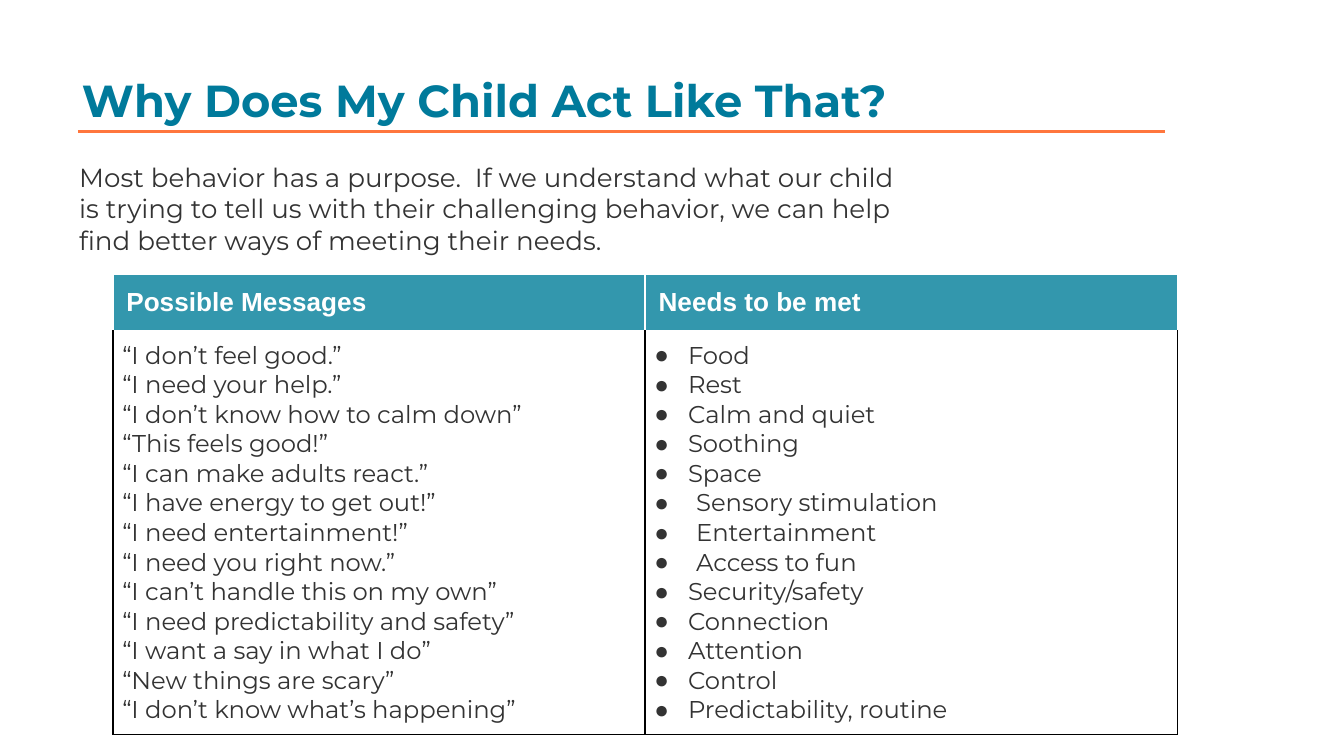
from dataclasses import dataclass

from lxml.etree import SubElement
from pptx import Presentation
from pptx.dml.color import RGBColor
from pptx.enum.shapes import MSO_CONNECTOR
from pptx.enum.text import MSO_ANCHOR, MSO_AUTO_SIZE, PP_ALIGN
from pptx.oxml.ns import qn
from pptx.util import Inches, Pt


@dataclass(frozen=True)
class Theme:
    heading: str = "007A9B"
    accent: str = "FF763D"
    text: str = "333333"
    header: str = "3397AD"
    white: str = "FFFFFF"
    black: str = "000000"
    font: str = "Montserrat"
    header_font: str = "Arial"
    title_size: float = 24
    intro_size: float = 14
    list_size: float = 13


THEME = Theme()

TITLE = "Why Does My Child Act Like That?"
INTRO = (
    "Most behavior has a purpose.  If we understand what our child is trying "
    "to tell us with their challenging behavior, we can help find better ways "
    "of meeting their needs."
)
HEADERS = ["Possible Messages", "Needs to be met"]
MESSAGES = [
    "“I don’t feel good.”",
    "“I need your help.”",
    "“I don’t know how to calm down”",
    "“This feels good!”",
    "“I can make adults react.”",
    "“I have energy to get out!”",
    "“I need entertainment!”",
    "“I need you right now.”",
    "“I can’t handle this on my own”",
    "“I need predictability and safety”",
    "“I want a say in what I do”",
    "“New things are scary”",
    "“I don’t know what’s happening”",
]
NEEDS = [
    "Food",
    "Rest",
    "Calm and quiet",
    "Soothing",
    "Space",
    "Sensory stimulation",
    "Entertainment",
    "Access to fun",
    "Security/safety",
    "Connection",
    "Attention",
    "Control",
    "Predictability, routine",
]
WIDE_INDENT_NEEDS = {"Sensory stimulation", "Entertainment", "Access to fun"}
BODY_ROWS = 5


def format_runs(paragraph, size, color, font=THEME.font, bold=False):
    for run in paragraph.runs:
        run.font.name = font
        run.font.size = Pt(size)
        run.font.bold = bold
        run.font.color.rgb = RGBColor.from_string(color)


def add_title(slide):
    title = slide.shapes.title
    title.left, title.top = Inches(0.51), Inches(0.39)
    title.width, title.height = Inches(6.83), Inches(0.5)
    frame = title.text_frame
    frame.text = TITLE
    frame.word_wrap = True
    frame.auto_size = MSO_AUTO_SIZE.NONE
    frame.vertical_anchor = MSO_ANCHOR.TOP
    paragraph = frame.paragraphs[0]
    paragraph.alignment = PP_ALIGN.LEFT
    paragraph.line_spacing = 1.25
    format_runs(paragraph, THEME.title_size, THEME.heading, bold=True)


def add_title_rule(slide):
    y = Inches(0.98)
    rule = slide.shapes.add_connector(
        MSO_CONNECTOR.STRAIGHT, Inches(0.58), y, Inches(8.67), y
    )
    rule.line.color.rgb = RGBColor.from_string(THEME.accent)
    rule.line.width = Pt(1.5)
    SubElement(rule._element.spPr, qn("a:effectLst"))


def add_intro(slide):
    box = slide.shapes.add_textbox(
        Inches(0.49), Inches(1.15), Inches(6.69), Inches(4.42)
    )
    frame = box.text_frame
    frame.word_wrap = True
    frame.margin_right = Inches(0.4)
    frame.text = INTRO
    format_runs(frame.paragraphs[0], THEME.intro_size, THEME.text)


def set_borders(cell, sides, top_and_bottom):
    """Draw the borders: sides is (left, right) colours, the other (top, bottom)."""
    properties = cell._tc.get_or_add_tcPr()
    colors = (*sides, *top_and_bottom)
    for tag, color in zip(("a:lnL", "a:lnR", "a:lnT", "a:lnB"), colors):
        line = SubElement(properties, qn(tag), w=str(Pt(1)))
        fill = SubElement(line, qn("a:solidFill"))
        SubElement(fill, qn("a:srgbClr"), val=color)


def set_margins(cell, margin):
    cell.margin_left = cell.margin_right = Inches(margin)
    cell.margin_top = cell.margin_bottom = Inches(margin)


def add_bullet(paragraph, left, hanging):
    properties = paragraph._p.get_or_add_pPr()
    properties.set("marL", str(Inches(left)))
    properties.set("indent", str(-Inches(hanging)))
    color = SubElement(properties, qn("a:buClr"))
    SubElement(color, qn("a:srgbClr"), val=THEME.text)
    SubElement(properties, qn("a:buFont"), typeface=THEME.header_font)
    SubElement(properties, qn("a:buChar"), char="●")


def fill_header_cell(cell, text):
    set_margins(cell, 0.1)
    cell.margin_bottom = Inches(0.09)
    set_borders(cell, (THEME.white,) * 2, (THEME.white,) * 2)
    cell.fill.solid()
    cell.fill.fore_color.rgb = RGBColor.from_string(THEME.header)
    cell.text_frame.text = text
    format_runs(
        cell.text_frame.paragraphs[0],
        THEME.intro_size, THEME.white, THEME.header_font, bold=True,
    )


def fill_list_cell(cell, entries, bulleted):
    set_margins(cell, 0.07)
    cell.text_frame.text = "\n".join(entries)
    for paragraph in cell.text_frame.paragraphs:
        if bulleted:
            wide = paragraph.text in WIDE_INDENT_NEEDS
            add_bullet(paragraph, *((0.31, 0.34) if wide else (0.25, 0.28)))
        format_runs(paragraph, THEME.list_size, THEME.text)


def add_needs_table(slide):
    header_height, row_height, column_width = 0.41, 0.6, 3.96
    table = slide.shapes.add_table(
        BODY_ROWS + 1, len(HEADERS), Inches(0.84), Inches(2.04),
        Inches(column_width * len(HEADERS)),
        Inches(header_height + row_height * BODY_ROWS),
    ).table
    table.first_row = table.horz_banding = False
    for index, row in enumerate(table.rows):
        row.height = Inches(row_height if index else header_height)

    for column, (header, entries) in enumerate(zip(HEADERS, (MESSAGES, NEEDS))):
        table.columns[column].width = Inches(column_width)
        fill_header_cell(table.cell(0, column), header)
        for row in range(1, BODY_ROWS + 1):
            cell = table.cell(row, column)
            set_borders(cell, (THEME.black,) * 2, (THEME.white, THEME.black))
            cell.fill.background()
        list_cell = table.cell(1, column)
        list_cell.merge(table.cell(BODY_ROWS, column))
        fill_list_cell(list_cell, entries, bulleted=entries is NEEDS)


def main():
    presentation = Presentation()
    presentation.slide_width = Inches(10)
    presentation.slide_height = Inches(10) * 9 // 16
    title_only = presentation.slide_layouts.get_by_name("Title Only")
    slide = presentation.slides.add_slide(title_only)
    add_title(slide)
    add_title_rule(slide)
    add_intro(slide)
    add_needs_table(slide)
    presentation.save("out.pptx")


if __name__ == "__main__":
    main()
